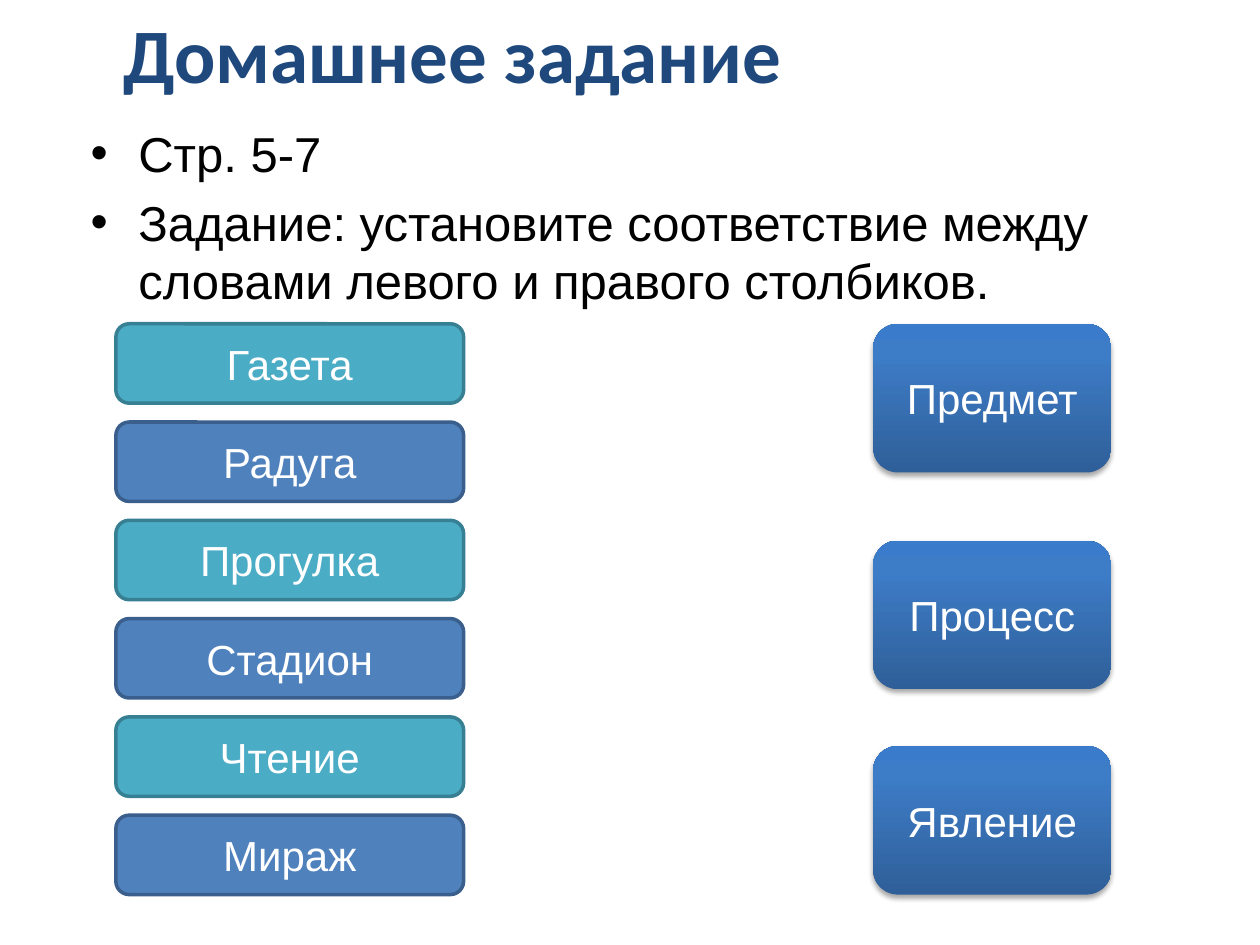
from dataclasses import dataclass

from lxml import etree
from pptx import Presentation
from pptx.dml.color import RGBColor
from pptx.enum.shapes import MSO_SHAPE
from pptx.enum.text import MSO_ANCHOR, PP_ALIGN
from pptx.oxml.ns import qn
from pptx.util import Inches, Pt

ROUNDED = MSO_SHAPE.ROUNDED_RECTANGLE
MIDDLE = MSO_ANCHOR.MIDDLE
CENTER = PP_ALIGN.CENTER

COLORS = {
    "title": "1F497D",
    "text": "000000",
    "card_text": "FFFFFF",
    "teal": "4BACC6",
    "teal_line": "377F92",
    "blue": "4F81BD",
    "blue_line": "3A5F8C",
    "shadow": "000000",
}
CATEGORY_GRADIENT = ((0, "2F5F99"), (80, "3D7CC7"), (100, "3A7CCB"))

TASKS = (
    "Стр. 5-7",
    "Задание: установите соответствие между словами левого и правого столбиков.",
)
WORDS = ("Газета", "Радуга", "Прогулка", "Стадион", "Чтение", "Мираж")
COLUMN_TOP = 2.57
WORD_STEP = 0.78


@dataclass
class Card:
    label: str
    left: float
    top: float
    width: float
    height: float


CATEGORIES = (
    Card("Предмет", 6.93, COLUMN_TOP, 1.89, 1.18),
    Card("Процесс", 6.93, 4.29, 1.89, 1.18),
    Card("Явление", 6.93, 5.92, 1.89, 1.18),
)


def rgb(name: str) -> RGBColor:
    return RGBColor.from_string(COLORS[name])


def add_run(paragraph, text: str, size: float, color: str,
            font_name: str = "Arial", bold: bool = False) -> None:
    run = paragraph.add_run()
    run.text = text
    run.font.size = Pt(size)
    run.font.name = font_name
    run.font.bold = bold
    run.font.color.rgb = rgb(color)


def add_text_frame(slide, left: float, top: float, width: float, height: float):
    box = slide.shapes.add_textbox(Inches(left), Inches(top), Inches(width), Inches(height))
    box.text_frame.word_wrap = True
    return box.text_frame


def add_bullet(paragraph) -> None:
    properties = paragraph._p.get_or_add_pPr()
    properties.set("marL", str(Inches(0.38)))
    properties.set("indent", str(Inches(-0.38)))
    etree.SubElement(properties, qn("a:buFont"), typeface="Arial")
    etree.SubElement(properties, qn("a:buChar"), char="•")


def add_card(slide, card: Card):
    shape = slide.shapes.add_shape(
        ROUNDED, Inches(card.left), Inches(card.top), Inches(card.width), Inches(card.height))
    shape.shadow.inherit = False
    frame = shape.text_frame
    frame.word_wrap = True
    frame.vertical_anchor = MIDDLE
    paragraph = frame.paragraphs[0]
    paragraph.alignment = CENTER
    add_run(paragraph, card.label, 24, "card_text")
    return shape


def add_word(slide, card: Card, color: str) -> None:
    shape = add_card(slide, card)
    shape.fill.solid()
    shape.fill.fore_color.rgb = rgb(color)
    shape.line.color.rgb = rgb(f"{color}_line")
    shape.line.width = Pt(2)


def add_category(slide, card: Card) -> None:
    """Draw a card with a three-stop gradient and a soft shadow below it."""
    shape = add_card(slide, card)
    shape.line.fill.background()
    shape.fill.gradient()
    shape.fill.gradient_angle = 90
    properties = shape._element.spPr
    stops = properties.find(f".//{qn('a:gsLst')}")
    stops.clear()
    for percent, color in CATEGORY_GRADIENT:
        stop = etree.SubElement(stops, qn("a:gs"), pos=str(percent * 1000))
        etree.SubElement(stop, qn("a:srgbClr"), val=color)
    shadow = etree.SubElement(
        properties.find(qn("a:effectLst")), qn("a:outerShdw"),
        blurRad=str(Pt(3.1)), dist=str(Pt(1.8)), dir="5400000", rotWithShape="0")
    shadow_color = etree.SubElement(shadow, qn("a:srgbClr"), val=COLORS["shadow"])
    etree.SubElement(shadow_color, qn("a:alpha"), val="35000")


def main() -> None:
    presentation = Presentation()
    presentation.slide_width = Inches(10)
    presentation.slide_height = Inches(7.5)
    slide = presentation.slides.add_slide(presentation.slide_layouts[6])

    tasks = add_text_frame(slide, 0.62, 0.93, 9.38, 1.62)
    for index, task in enumerate(TASKS):
        paragraph = tasks.add_paragraph() if index else tasks.paragraphs[0]
        add_bullet(paragraph)
        if index:
            paragraph.space_before = Pt(5.6)
        add_run(paragraph, task, 28, "text")

    for category in CATEGORIES:
        add_category(slide, category)
    for index, word in enumerate(WORDS):
        card = Card(word, 0.92, COLUMN_TOP + index * WORD_STEP, 2.76, 0.63)
        add_word(slide, card, "blue" if index % 2 else "teal")

    title = add_text_frame(slide, 0.88, 0.07, 8.36, 0.69)
    title.vertical_anchor = MIDDLE
    add_run(title.paragraphs[0], "Домашнее задание", 44, "title", "Calibri", bold=True)

    presentation.save("out.pptx")


if __name__ == "__main__":
    main()
